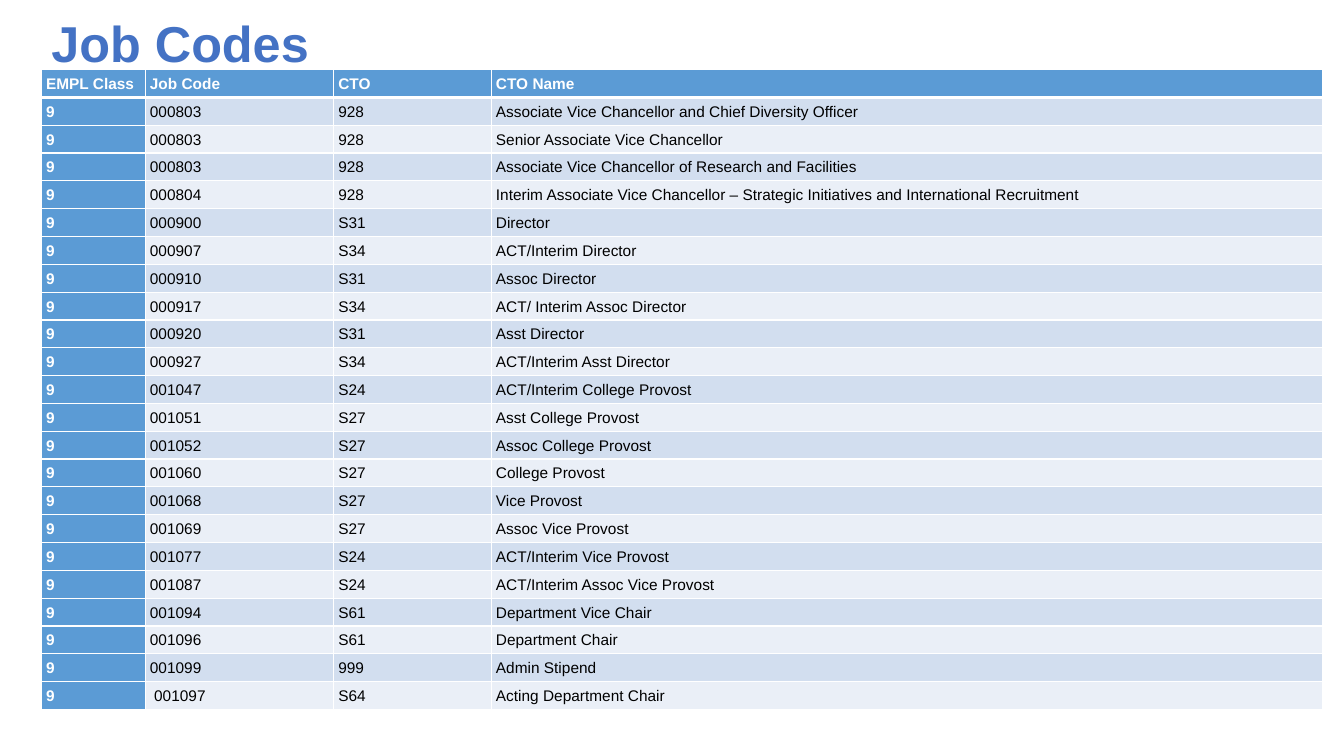
import pptx
import pptx.util
import pptx.dml.color
import pptx.enum.text
import pptx.oxml
import pptx.oxml.ns
from dataclasses import dataclass

Pt = pptx.util.Pt
MIDDLE = pptx.enum.text.MSO_ANCHOR.MIDDLE


@dataclass(frozen=True)
class Theme:
    font: str = "Arial"
    title_size: float = 36
    cell_size: float = 11
    title: str = "4472C4"
    accent: str = "5B9BD5"
    bands: tuple = ("D2DEEF", "EAEFF7")
    text: str = "000000"
    white: str = "FFFFFF"
    cell_inset: float = 3.4
    line_spacing: float = 1.07
    rule: float = 1
    header_rule: float = 3


def apply(target, formats):
    for attribute, value in formats.items():
        setattr(target, attribute, value)


class SlideBuilder:
    def __init__(self, slide, theme):
        self.slide = slide
        self.theme = theme

    def style_font(self, font, size, color, bold):
        apply(font, {"name": self.theme.font, "size": Pt(size), "bold": bold})
        font.color.rgb = pptx.dml.color.RGBColor.from_string(color)

    def title(self, wording, left, top, width, height):
        heading = self.slide.shapes.title
        apply(heading, {"left": Pt(left), "top": Pt(top),
                        "width": Pt(width), "height": Pt(height)})
        frame = heading.text_frame
        frame.text = wording
        apply(frame, {"vertical_anchor": MIDDLE, "word_wrap": True,
                      "auto_size": pptx.enum.text.MSO_AUTO_SIZE.NONE})
        line = frame.paragraphs[0]
        line.alignment = pptx.enum.text.PP_ALIGN.LEFT
        self.style_font(line.runs[0].font, self.theme.title_size, self.theme.title, True)

    def borders(self, cell, top, bottom):
        sides = {"lnL": self.theme.rule, "lnR": self.theme.rule, "lnT": top, "lnB": bottom}
        properties = cell._tc.get_or_add_tcPr()
        for position, (side, weight) in enumerate(sides.items()):
            properties.insert(position, pptx.oxml.parse_xml(
                f'<a:{side} {pptx.oxml.ns.nsdecls("a")} w="{Pt(weight)}"><a:solidFill>'
                f'<a:srgbClr val="{self.theme.white}"/></a:solidFill></a:{side}>'))

    def cell(self, cell, wording, row, column):
        theme = self.theme
        heading = row == 0 or column == 0
        inset = Pt(theme.cell_inset)
        cell.text = wording
        apply(cell, {"vertical_anchor": MIDDLE, "margin_left": inset, "margin_right": inset,
                     "margin_top": inset, "margin_bottom": inset})
        line = cell.text_frame.paragraphs[0]
        line.line_spacing = theme.line_spacing
        self.style_font(line.runs[0].font, theme.cell_size,
                        theme.white if heading else theme.text, heading)
        cell.fill.solid()
        cell.fill.fore_color.rgb = pptx.dml.color.RGBColor.from_string(
            theme.accent if heading else theme.bands[(row - 1) % 2])
        self.borders(cell,
                     top=theme.header_rule if row == 1 else theme.rule,
                     bottom=theme.header_rule if row == 0 else theme.rule)

    def table(self, rows, left, top, widths, row_height, height):
        holder = self.slide.shapes.add_table(len(rows), len(widths), Pt(left), Pt(top),
                                             Pt(sum(widths)), Pt(height))
        grid = holder.table
        grid.first_col = True
        for column, width in zip(grid.columns, widths):
            column.width = Pt(width)
        for row, wordings in enumerate(rows):
            grid.rows[row].height = Pt(row_height)
            for column, wording in enumerate(wordings):
                self.cell(grid.cell(row, column), wording, row, column)
        holder.height = Pt(height)


# Content
EMPL_CLASS = "9"
HEADER = ("EMPL Class ", "Job Code", "CTO", "CTO Name")
JOBS = [
    ("000803", "928", "Associate Vice Chancellor and Chief Diversity Officer"),
    ("000803", "928", "Senior Associate Vice Chancellor"),
    ("000803", "928", "Associate Vice Chancellor of Research and Facilities"),
    ("000804", "928", "Interim Associate Vice Chancellor – Strategic Initiatives "
                      "and International Recruitment"),
    ("000900", "S31", "Director"),
    ("000907", "S34", "ACT/Interim Director"),
    ("000910", "S31", "Assoc Director"),
    ("000917", "S34", "ACT/ Interim Assoc Director"),
    ("000920", "S31", "Asst Director"),
    ("000927", "S34", "ACT/Interim Asst Director"),
    ("001047", "S24", "ACT/Interim College Provost"),
    ("001051", "S27", "Asst College Provost"),
    ("001052", "S27", "Assoc College Provost"),
    ("001060", "S27", "College Provost"),
    ("001068", "S27", "Vice Provost"),
    ("001069", "S27", "Assoc Vice Provost"),
    ("001077", "S24", "ACT/Interim Vice Provost"),
    ("001087", "S24", "ACT/Interim Assoc Vice Provost"),
    ("001094", "S61", "Department Vice Chair"),
    ("001096", "S61", "Department Chair"),
    ("001099", "999", "Admin Stipend"),
    (" 001097", "S64", "Acting Department Chair"),
]


def main():
    deck = pptx.Presentation()
    apply(deck, {"slide_width": Pt(960), "slide_height": Pt(540)})
    title_only = deck.slide_layouts[5]
    builder = SlideBuilder(deck.slides.add_slide(title_only), Theme())

    # Heading
    builder.title("Job Codes", left=29.5, top=3, width=863, height=54)

    # Job code table
    rows = [HEADER] + [(EMPL_CLASS, *job) for job in JOBS]
    builder.table(rows, left=29.5, top=49.7, widths=(74.2, 134.6, 112.6, 593.6),
                  row_height=16.56, height=490.3)

    deck.save("out.pptx")


if __name__ == "__main__":
    main()
